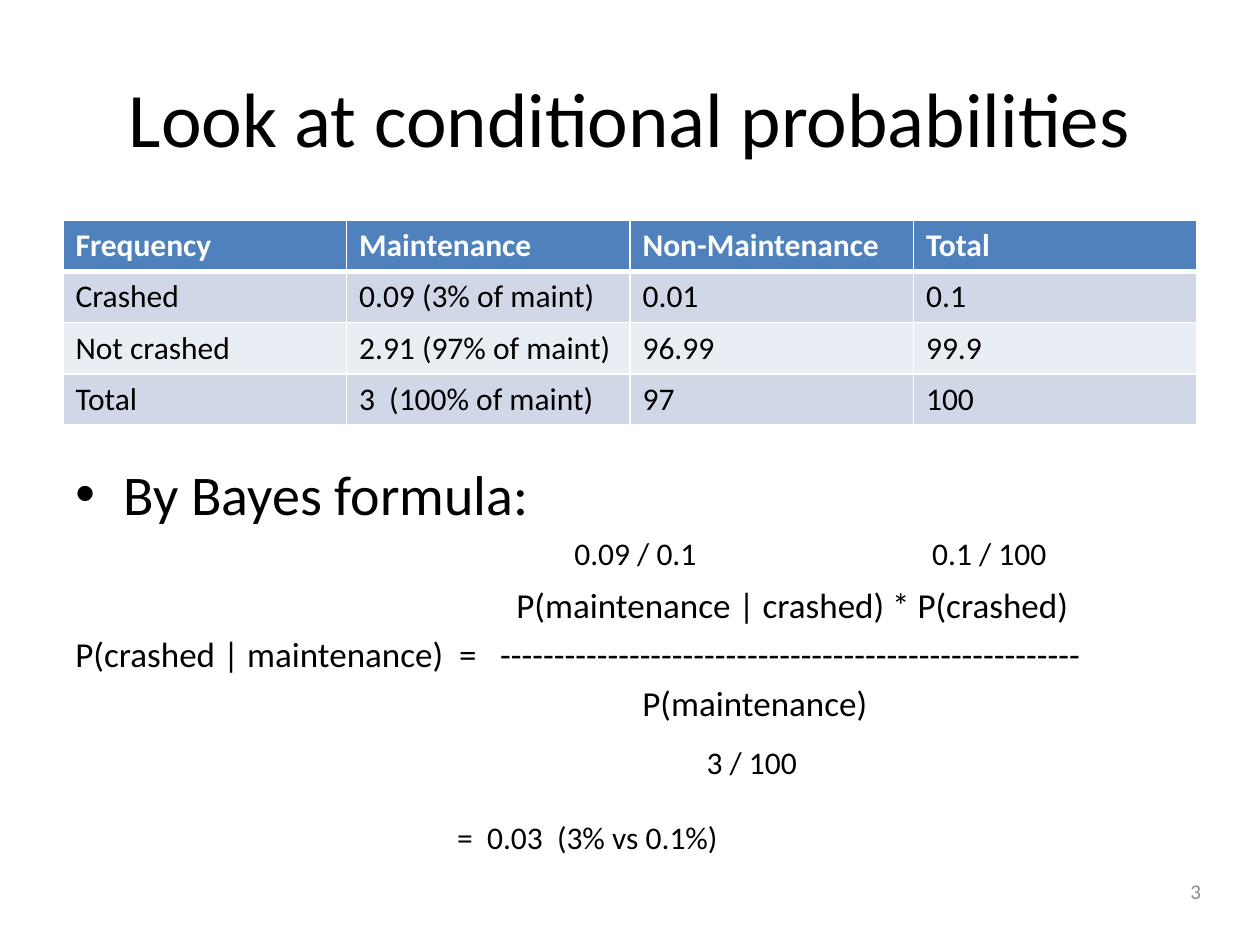
from lxml import etree
from pptx import Presentation
from pptx import util as u
from pptx.dml.color import RGBColor
from pptx.enum import text
from pptx.oxml import ns

BLACK, WHITE, GRAY = "000000", "FFFFFF", "8C8C8C"
HEADER, BAND, LIGHT = "4F81BD", "D0D8E8", "E9EDF4"


def rgb(value):
    return RGBColor.from_string(value)


class Deck:
    font = "Calibri"

    def __init__(self, prs):
        self.prs = prs
        self.s = prs.slides.add_slide(prs.slide_layouts[5])

    def format(self, p, size, color=BLACK, bold=False):
        for r in p.runs:
            r.font.name = self.font
            r.font.size = u.Pt(size)
            r.font.bold = bold
            r.font.color.rgb = rgb(color)

    def place(self, sp, left, top, width, height):
        sp.left, sp.top = u.Inches(left), u.Inches(top)
        sp.width, sp.height = u.Inches(width), u.Inches(height)

    def title(self, words, box):
        sp = self.s.shapes.title
        self.place(sp, *box)
        tf = sp.text_frame
        tf.text = words
        tf.vertical_anchor = text.MSO_ANCHOR.MIDDLE
        p = tf.paragraphs[0]
        p.alignment = text.PP_ALIGN.CENTER
        self.format(p, 44)

    def label(self, words, box, size=18, color=BLACK, wrap=False,
              align=text.PP_ALIGN.LEFT, anchor=text.MSO_ANCHOR.TOP):
        sp = self.s.shapes.add_textbox(*map(u.Inches, box))
        tf = sp.text_frame
        tf.word_wrap = wrap
        tf.vertical_anchor = anchor
        tf.text = words
        p = tf.paragraphs[0]
        p.alignment = align
        self.format(p, size, color)
        return tf

    def bullet(self, p, indent):
        pPr = p._p.get_or_add_pPr()
        pPr.set("marL", str(u.Inches(indent)))
        pPr.set("indent", str(-u.Inches(indent)))
        etree.SubElement(pPr, ns.qn("a:buFont"), typeface="Arial")
        etree.SubElement(pPr, ns.qn("a:buChar"), char="•")

    def line(self, tf, words, size, indent, before):
        p = tf.add_paragraph()
        p.text = words
        p.space_before = u.Pt(before)
        p._p.get_or_add_pPr().set("marL", str(u.Inches(indent)))
        self.format(p, size)

    def borders(self, cell, widths):
        tcPr = cell._tc.get_or_add_tcPr()
        for i, (side, width) in enumerate(widths.items()):
            ln = etree.Element(ns.qn(f"a:ln{side}"), w=str(u.Pt(width)))
            fill = etree.SubElement(ln, ns.qn("a:solidFill"))
            etree.SubElement(fill, ns.qn("a:srgbClr"), val=WHITE)
            tcPr.insert(i, ln)

    def table(self, rows, box):
        frame = self.s.shapes.add_table(len(rows), len(rows[0]), *map(u.Inches, box))
        for i, row in enumerate(rows):
            head = i == 0
            for j, words in enumerate(row):
                cell = frame.table.cell(i, j)
                cell.text = words
                cell.fill.solid()
                cell.fill.fore_color.rgb = rgb(HEADER if head else BAND if i % 2 else LIGHT)
                self.format(cell.text_frame.paragraphs[0], 18, WHITE if head else BLACK, head)
                self.borders(cell, {"L": 1, "R": 1, "T": 3 if i == 1 else 1, "B": 3 if head else 1})


def main():
    prs = Presentation()
    prs.slide_width, prs.slide_height = u.Inches(10), u.Inches(7.5)
    deck = Deck(prs)

    deck.title("Look at conditional probabilities", (0.5, 0.3, 9, 1.25))
    deck.table([
        ["Frequency", "Maintenance", "Non-Maintenance", "Total"],
        ["Crashed", "0.09 (3% of maint)", "0.01", "0.1"],
        ["Not crashed", "2.91 (97% of maint)", "96.99", "99.9"],
        ["Total", "3  (100% of maint)", "97", "100"],
    ], (0.5, 1.75, 9, 1.62))

    tf = deck.label("By Bayes formula:", (0.5, 3.6, 9, 3.17), size=32, wrap=True)
    deck.bullet(tf.paragraphs[0], 0.38)
    for words, indent, before in [
        ("P(maintenance | crashed) * P(crashed)", 3.5, 32.5),
        ("P(crashed | maintenance)  =   " + "-" * 54, 0, 4),
        ("P(maintenance)", 4.5, 4),
    ]:
        deck.line(tf, words, 20, indent, before)

    for words, left, top, width in [
        ("0.09 / 0.1", 4.46, 4.19, 1.18),
        ("0.1 / 100", 7.3, 4.19, 1.12),
        ("3 / 100", 5.51, 5.85, 0.93),
        ("=  0.03  (3% vs 0.1%)", 3.53, 6.44, 2.29),
    ]:
        deck.label(words, (left, top, width, 0.4))

    deck.label("3", (7.3, 6.87, 2.33, 0.4), size=12, color=GRAY, wrap=True,
               align=text.PP_ALIGN.RIGHT, anchor=text.MSO_ANCHOR.MIDDLE)
    prs.save("out.pptx")


if __name__ == "__main__":
    main()
